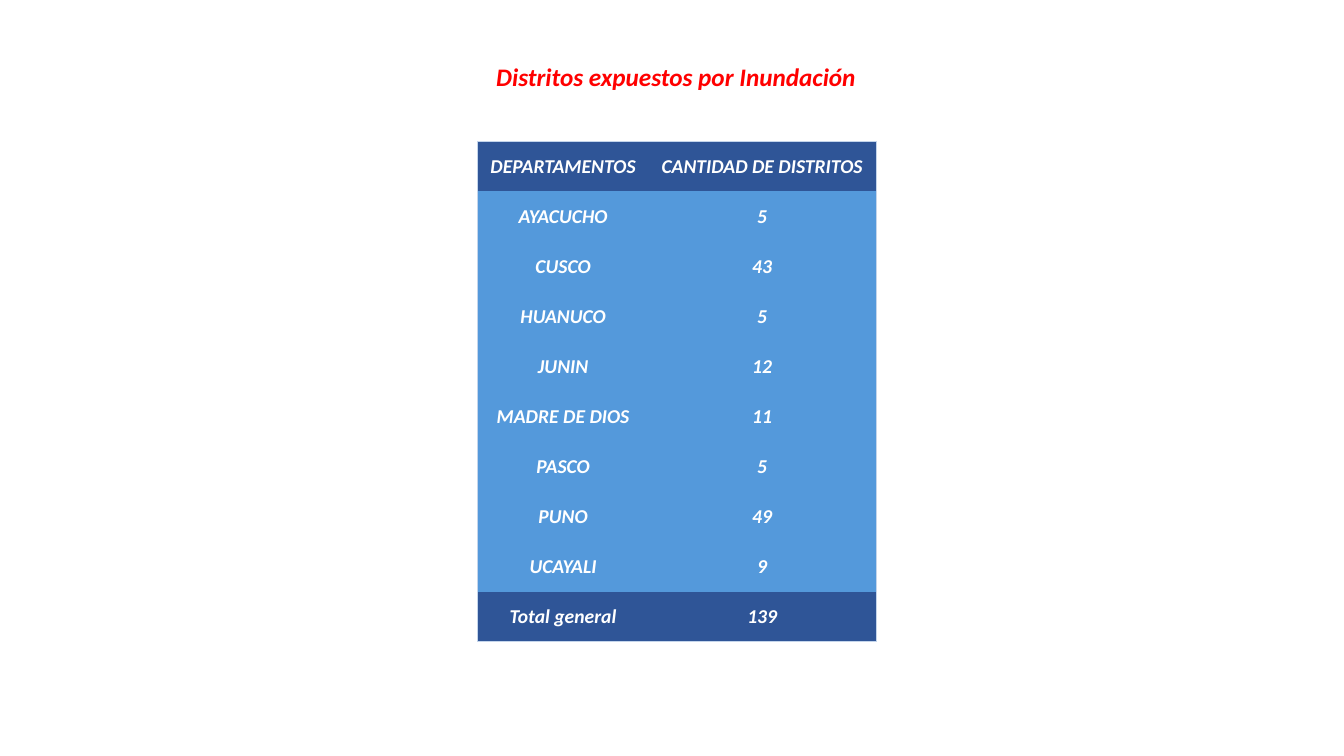
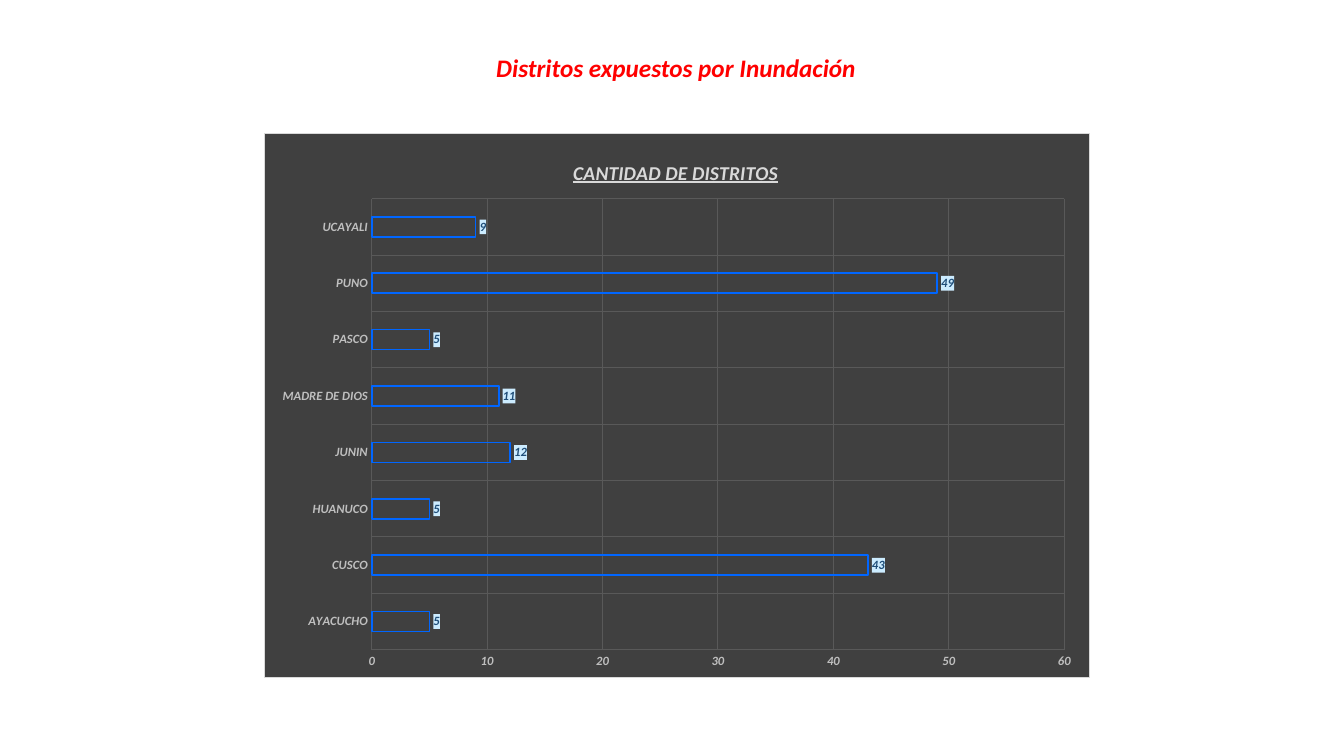
import pptx
import pptx.chart.data
import pptx.dml.color
import pptx.enum.chart
import pptx.enum.text
import pptx.oxml
import pptx.oxml.ns
import pptx.util
from lxml import etree

Pt = pptx.util.Pt

TITLE = "Distritos expuestos por Inundación"
HEADERS = ("DEPARTAMENTOS", "CANTIDAD DE DISTRITOS")
DISTRICTS = [
    ("AYACUCHO", 5),
    ("CUSCO", 43),
    ("HUANUCO", 5),
    ("JUNIN", 12),
    ("MADRE DE DIOS", 11),
    ("PASCO", 5),
    ("PUNO", 49),
    ("UCAYALI", 9),
]
TOTAL_LABEL = "Total general"

FONT = "Calibri"
RED, WHITE = "FF0000", "FFFFFF"
NAVY, BLUE, PALE_BORDER = "2F5597", "5499DB", "C4D5EB"
CHARCOAL, GRID, SILVER, LIGHT = "404040", "595959", "BFBFBF", "D9D9D9"
BAR_LINE, LABEL_TEXT, LABEL_FILL = "0066FF", "1F4E79", "CCECFF"

SLIDE_SIZE = (960, 540)
TITLE_WIDTH, TITLE_HEIGHT = 274, 29
COLUMN_WIDTHS, ROW_HEIGHT = (121.9, 162.5), 35.75


def color(hex_code):
    return pptx.dml.color.RGBColor.from_string(hex_code)


def style_font(font, size, hex_code):
    font.name = FONT
    font.size = Pt(size)
    font.bold = font.italic = True
    font.color.rgb = color(hex_code)


def style_line(line, hex_code, width):
    line.color.rgb = color(hex_code)
    line.width = Pt(width)


def fill_solid(fill, hex_code):
    fill.solid()
    fill.fore_color.rgb = color(hex_code)


def add_titled_page(deck, title_top):
    page = deck.slides.add_slide(deck.slide_layouts[5])
    title = page.shapes.title
    title.left, title.top = Pt(345.9), Pt(title_top)
    title.width, title.height = Pt(TITLE_WIDTH), Pt(TITLE_HEIGHT)
    frame = title.text_frame
    frame.text = TITLE
    frame.word_wrap = False
    para = frame.paragraphs[0]
    para.alignment = pptx.enum.text.PP_ALIGN.CENTER
    style_font(para.font, 18, RED)
    return page


def set_borders(cell, visible_sides):
    """Outline the named sides (L, R, T, B) and hide the others."""
    properties = cell._tc.get_or_add_tcPr()
    for side in "LRTB":
        line = etree.SubElement(properties, pptx.oxml.ns.qn("a:ln" + side), w=str(Pt(0.5)))
        if side in visible_sides:
            solid = etree.SubElement(line, pptx.oxml.ns.qn("a:solidFill"))
            etree.SubElement(solid, pptx.oxml.ns.qn("a:srgbClr"), val=PALE_BORDER)
        else:
            etree.SubElement(line, pptx.oxml.ns.qn("a:noFill"))


def add_district_table(page):
    total = sum(count for _, count in DISTRICTS)
    rows = [HEADERS, *DISTRICTS, (TOTAL_LABEL, total)]
    last = len(rows) - 1
    table = page.shapes.add_table(
        len(rows), len(HEADERS), Pt(341.3), Pt(100.8),
        Pt(sum(COLUMN_WIDTHS)), Pt(ROW_HEIGHT * len(rows))).table
    table.first_row = table.horz_banding = False
    for column, width in zip(table.columns, COLUMN_WIDTHS):
        column.width = Pt(width)
    for r, values in enumerate(rows):
        table.rows[r].height = Pt(ROW_HEIGHT)
        edge = {0: "T", last: "B"}.get(r, "")
        for c, value in enumerate(values):
            cell = table.cell(r, c)
            cell.text = str(value)
            cell.vertical_anchor = pptx.enum.text.MSO_ANCHOR.MIDDLE
            cell.margin_left = cell.margin_right = cell.margin_top = Pt(0.7)
            cell.margin_bottom = Pt(0)
            para = cell.text_frame.paragraphs[0]
            para.alignment = pptx.enum.text.PP_ALIGN.CENTER
            style_font(para.font, 14, WHITE)
            set_borders(cell, edge + "LR"[c])
            fill_solid(cell.fill, NAVY if edge else BLUE)


def chart_xml(body):
    return pptx.oxml.parse_xml(body.replace(
        ">", " " + pptx.oxml.ns.nsdecls("c", "a") + ">", 1))


def manual_layout(inner=False, **fractions):
    """Layout element placed by fractions of the chart area."""
    target = '<c:layoutTarget val="inner"/>' if inner else ""
    modes = "".join(f'<c:{key}Mode val="edge"/>' for key in "xy")
    places = "".join(f'<c:{key} val="{value}"/>' for key, value in fractions.items())
    return chart_xml("<c:layout><c:manualLayout>" + target + modes + places
                     + "</c:manualLayout></c:layout>")


def replace_layout(parent, layout, before):
    for old in parent.findall(pptx.oxml.ns.qn("c:layout")):
        parent.remove(old)
    parent.find(pptx.oxml.ns.qn(before)).addprevious(layout)


def style_axis(axis):
    axis.major_tick_mark = axis.minor_tick_mark = pptx.enum.chart.XL_TICK_MARK.NONE
    axis.format.line.fill.background()
    axis.has_major_gridlines = True
    style_line(axis.major_gridlines.format.line, GRID, 0.75)
    style_font(axis.tick_labels.font, 9, SILVER)


def style_chart_title(chart):
    chart.has_title = True
    frame = chart.chart_title.text_frame
    frame.text = HEADERS[1]
    font = frame.paragraphs[0].font
    style_font(font, 14, LIGHT)
    font.underline = True
    chart.chart_title.include_in_layout = False
    replace_layout(chart.chart_title._element, manual_layout(x=0.37, y=0.04), "c:overlay")


def style_bars(plot):
    plot.gap_width, plot.overlap = 182, -50
    plot.vary_by_categories = False
    bars = plot.series[0].format
    bars.fill.background()
    style_line(bars.line, BAR_LINE, 1.25)
    plot.has_data_labels = True
    labels = plot.data_labels
    labels.show_value = True
    labels.position = pptx.enum.chart.XL_LABEL_POSITION.OUTSIDE_END
    labels.number_format, labels.number_format_is_linked = "#,##0", False
    style_font(labels.font, 9, LABEL_TEXT)
    labels._element.find(pptx.oxml.ns.qn("c:txPr")).addprevious(chart_xml(
        f'<c:spPr><a:solidFill><a:srgbClr val="{LABEL_FILL}"/></a:solidFill></c:spPr>'))


def style_chart_area(chart):
    chart._chartSpace.find(pptx.oxml.ns.qn("c:txPr")).addprevious(chart_xml(
        f'<c:spPr><a:solidFill><a:srgbClr val="{CHARCOAL}"/></a:solidFill>'
        f'<a:ln w="{Pt(0.75)}"><a:solidFill><a:srgbClr val="{LIGHT}"/></a:solidFill></a:ln>'
        "</c:spPr>"))
    plot_area = chart._chartSpace.chart.plotArea
    replace_layout(plot_area, manual_layout(True, x=0.13, y=0.12, w=0.84, h=0.83), "c:barChart")


def add_district_chart(page):
    data = pptx.chart.data.CategoryChartData(number_format="#,##0")
    data.categories = [name for name, _ in DISTRICTS]
    data.add_series(HEADERS[1], [count for _, count in DISTRICTS])
    chart = page.shapes.add_chart(
        pptx.enum.chart.XL_CHART_TYPE.BAR_CLUSTERED,
        Pt(188.6), Pt(95), Pt(589.7), Pt(389), data).chart
    chart.has_legend = False
    chart.font.name, chart.font.size = FONT, Pt(10)
    style_chart_title(chart)
    for axis in (chart.category_axis, chart.value_axis):
        style_axis(axis)
    scale = chart.value_axis
    scale.minimum_scale, scale.maximum_scale, scale.major_unit = 0, 60, 10
    scale.tick_labels.number_format = "#,##0"
    scale.tick_labels.number_format_is_linked = False
    style_bars(chart.plots[0])
    style_chart_area(chart)


def main():
    deck = pptx.Presentation()
    deck.slide_width, deck.slide_height = map(Pt, SLIDE_SIZE)
    add_district_table(add_titled_page(deck, title_top=40))
    add_district_chart(add_titled_page(deck, title_top=34))
    deck.save("out.pptx")


if __name__ == "__main__":
    main()
